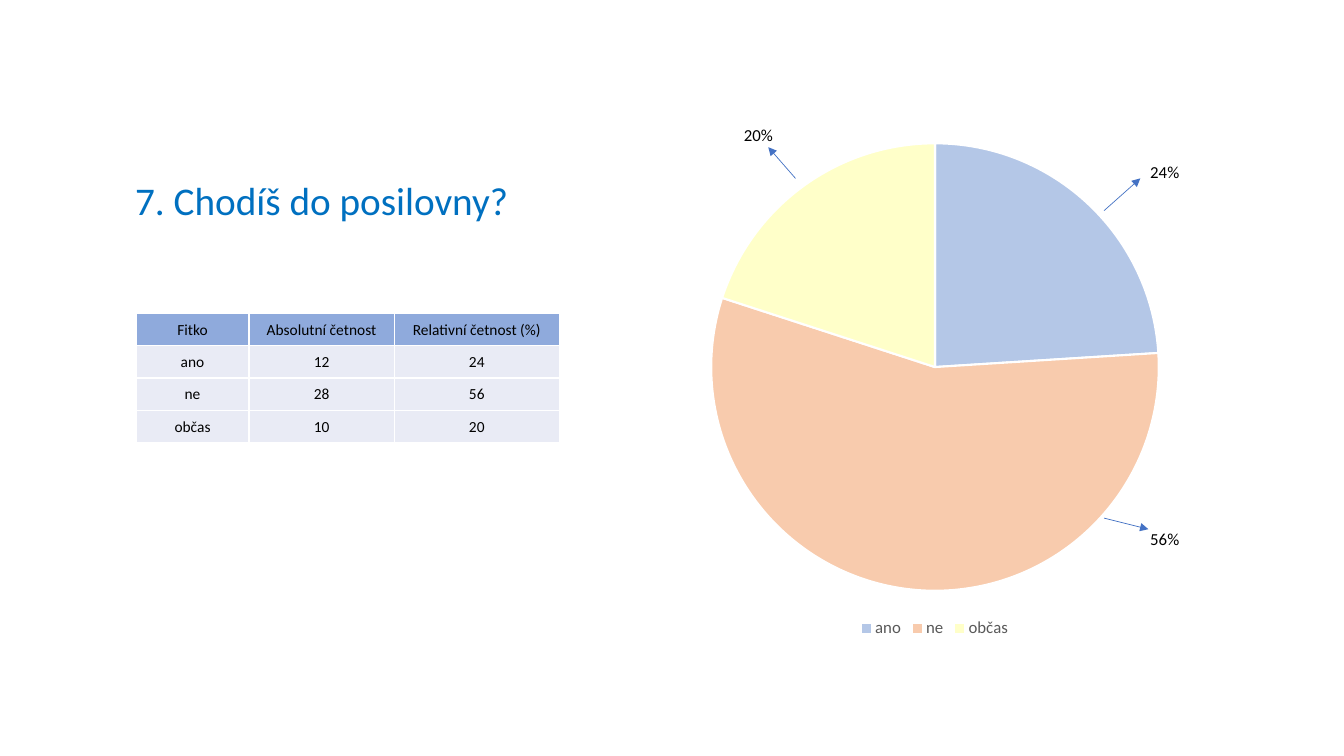
from dataclasses import dataclass
from lxml import etree
from pptx import Presentation
from pptx.chart.data import CategoryChartData
from pptx.dml.color import RGBColor
from pptx.enum.chart import XL_CHART_TYPE, XL_LEGEND_POSITION
from pptx.enum.shapes import MSO_CONNECTOR
from pptx.enum.text import MSO_ANCHOR, MSO_AUTO_SIZE, PP_ALIGN
from pptx.oxml import parse_xml
from pptx.oxml.ns import nsdecls, qn
from pptx.util import Pt

PIE = XL_CHART_TYPE.PIE
BOTTOM = XL_LEGEND_POSITION.BOTTOM
LINE = MSO_CONNECTOR.STRAIGHT
MIDDLE = MSO_ANCHOR.MIDDLE
LEFT, CENTER = PP_ALIGN.LEFT, PP_ALIGN.CENTER
GROW = MSO_AUTO_SIZE.SHAPE_TO_FIT_TEXT
SCALE = 9144


@dataclass(frozen=True)
class Theme:
    font: str = "Calibri"
    title: str = "0070C0"
    text: str = "000000"
    muted: str = "595959"
    white: str = "FFFFFF"
    head: str = "8FAADC"
    body: str = "E9EBF5"
    arrow: str = "4472C4"
    slices: tuple = ("B4C7E7", "F8CBAD", "FFFFC9")
    big: int = 28
    label: int = 12
    cell: int = 11


THEME = Theme()
TITLE = "7. Chodíš do posilovny?"
HEADS = ("Fitko", "Absolutní četnost", "Relativní četnost (%)")
ANSWERS = (("ano", 12, 24), ("ne", 28, 56), ("občas", 10, 20))
COLS = (112, 144, 164)
ROW = 32
CHART = (521, 129, 812, 508)
DISC = (705, 142, 444, 444)
ARROWS = ((1095, 209, 1131, 177), (1095, 514, 1139, 525), (789, 177, 762, 146))
LABELS = ((1131, 156), (1131, 520), (728, 119))


def px(*nums):
    return [round(n * SCALE) for n in nums]


def rgb(code):
    return RGBColor.from_string(code)


def style(font, size, color):
    font.name = THEME.font
    font.size = Pt(size)
    font.color.rgb = rgb(color)


def write(frame, text, size=THEME.label, color=THEME.text, align=LEFT, space=None):
    para = frame.paragraphs[0]
    para.alignment = align
    para.line_spacing = space
    run = para.add_run()
    run.text = text
    style(run.font, size, color)


def add_title(slide):
    box = slide.shapes.title
    box.left, box.top, box.width, box.height = px(124, 129, 1177, 145)
    box.text_frame.vertical_anchor = MIDDLE
    write(box.text_frame, TITLE, size=THEME.big, color=THEME.title, space=0.9)


def fill_cell(cell, text, color):
    cell.margin_left, cell.margin_right, cell.margin_top, cell.margin_bottom = px(1, 1, 1, 0)
    cell.vertical_anchor = MIDDLE
    write(cell.text_frame, text, size=THEME.cell, align=CENTER)
    props = cell._tc.get_or_add_tcPr()
    for side in ("lnL", "lnR", "lnT", "lnB"):
        props.append(parse_xml(
            f'<a:{side} {nsdecls("a")} w="12700"><a:solidFill>'
            f'<a:srgbClr val="{THEME.white}"/></a:solidFill></a:{side}>'))
    cell.fill.solid()
    cell.fill.fore_color.rgb = rgb(color)


def add_table(slide):
    rows = (HEADS, *ANSWERS)
    place = px(135, 311, sum(COLS), ROW * len(rows))
    table = slide.shapes.add_table(len(rows), len(COLS), *place).table
    table.horz_banding = False
    for col, width in zip(table.columns, px(*COLS)):
        col.width = width
    for r, row in enumerate(rows):
        table.rows[r].height = px(ROW)[0]
        for c, value in enumerate(row):
            fill_cell(table.cell(r, c), str(value), THEME.body if r else THEME.head)


def place_disc(chart):
    left, top, wide, high = CHART
    x, y, w, h = DISC
    parts = {"x": (x - left) / wide, "y": (y - top) / high, "w": w / wide, "h": h / high}
    area = chart._chartSpace.find(".//" + qn("c:plotArea"))
    for old in area.findall(qn("c:layout")):
        area.remove(old)
    layout = etree.Element(qn("c:layout"))
    manual = etree.SubElement(layout, qn("c:manualLayout"))
    rules = {"layoutTarget": "inner", "xMode": "edge", "yMode": "edge"}
    rules.update({key: f"{part:.3f}" for key, part in parts.items()})
    for key, value in rules.items():
        etree.SubElement(manual, qn("c:" + key)).set("val", value)
    area.insert(0, layout)


def add_pie(slide):
    data = CategoryChartData()
    data.categories = [name for name, count, share in ANSWERS]
    data.add_series("Relativní četnost (%)", [share for name, count, share in ANSWERS])
    chart = slide.shapes.add_chart(PIE, *px(*CHART), data).chart
    style(chart.font, 10, THEME.text)
    chart.has_title = False
    chart.has_legend = True
    chart.legend.position = BOTTOM
    chart.legend.include_in_layout = False
    style(chart.legend.font, THEME.label, THEME.muted)
    plot = chart.plots[0]
    plot.vary_by_categories = True
    for i, color in enumerate(THEME.slices):
        form = plot.series[0].points[i].format
        form.fill.solid()
        form.fill.fore_color.rgb = rgb(color)
        form.line.color.rgb = rgb(THEME.white)
        form.line.width = Pt(1.5)
    place_disc(chart)


def add_arrow(slide, ends):
    arrow = slide.shapes.add_connector(LINE, *px(*ends))
    arrow.line.color.rgb = rgb(THEME.arrow)
    arrow.line.width = Pt(0.5)
    etree.SubElement(arrow.line._get_or_add_ln(), qn("a:tailEnd")).set("type", "triangle")
    etree.SubElement(arrow._element.spPr, qn("a:effectLst"))


def add_label(slide, spot, share):
    frame = slide.shapes.add_textbox(*px(*spot, 49, 30)).text_frame
    frame.word_wrap = False
    frame.auto_size = GROW
    write(frame, f"{share}%")


def main():
    deck = Presentation()
    deck.slide_width, deck.slide_height = px(1333, 750)
    slide = deck.slides.add_slide(deck.slide_layouts[5])
    add_title(slide)
    add_table(slide)
    add_pie(slide)
    for ends in ARROWS:
        add_arrow(slide, ends)
    for spot, (name, count, share) in zip(LABELS, ANSWERS):
        add_label(slide, spot, share)
    deck.save("out.pptx")


if __name__ == "__main__":
    main()
